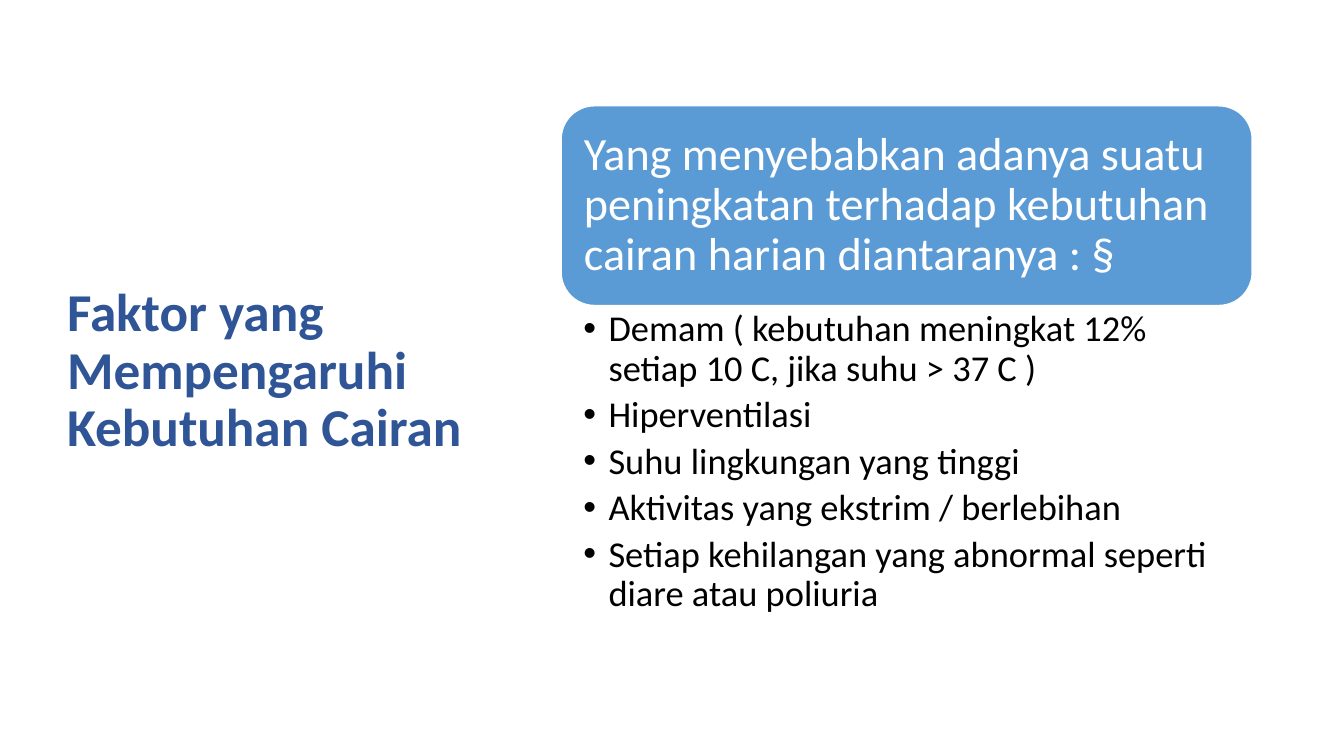
from dataclasses import dataclass

from lxml.etree import SubElement
from pptx import Presentation
from pptx.dml.color import RGBColor
from pptx.enum.shapes import MSO_SHAPE
from pptx.enum.text import MSO_ANCHOR, PP_ALIGN
from pptx.oxml.ns import qn
from pptx.util import Inches, Pt

PAGE_WIDTH, PAGE_HEIGHT = Inches(13.33), Inches(7.5)
COLUMN, ROW = PAGE_WIDTH / 12, PAGE_HEIGHT / 12
FONT = "Calibri"
COLOURS = {
    "title": "2F5597",
    "panel": "5B9BD5",
    "white": "FFFFFF",
    "black": "000000",
}


@dataclass(frozen=True)
class Area:
    column: float
    row: float
    columns: float
    rows: float

    def box(self) -> tuple[int, int, int, int]:
        return (round(self.column * COLUMN), round(self.row * ROW),
                round(self.columns * COLUMN), round(self.rows * ROW))


@dataclass(frozen=True)
class TextBlock:
    area: Area
    paragraphs: tuple[str, ...]
    size: int
    colour: str
    insets: tuple[float, float, float, float] = (0.1, 0.05, 0.1, 0.05)
    anchor: MSO_ANCHOR = MSO_ANCHOR.MIDDLE
    bold: bool = False
    bullets: bool = False
    gap: float = 0
    fill: str | None = None


PANEL = Area(5.01, 1.68, 6.17, 3.17)
BLOCKS = (
    TextBlock(Area(0.51, 1.09, 3.74, 9.63),
              ("Faktor yang Mempengaruhi Kebutuhan Cairan",),
              38, "title", bold=True),
    TextBlock(PANEL,
              ("Yang menyebabkan adanya suatu peningkatan terhadap "
               "kebutuhan cairan harian diantaranya : §",),
              33, "white", insets=(0.13, 0.13, 0.13, 0.13), fill="panel"),
    TextBlock(Area(PANEL.column, PANEL.row + PANEL.rows, PANEL.columns, 5.26),
              ("Demam ( kebutuhan meningkat 12% setiap 10 C, jika suhu > 37 C )",
               "Hiperventilasi",
               "Suhu lingkungan yang tinggi",
               "Aktivitas yang ekstrim / berlebihan",
               "Setiap kehilangan yang abnormal seperti diare atau poliuria"),
              26, "black", insets=(0.22, 0.05, 0.26, 0.05),
              anchor=MSO_ANCHOR.TOP, bullets=True, gap=0.2),
)


def colour(name: str) -> RGBColor:
    return RGBColor.from_string(COLOURS[name])


def add_bullet(para) -> None:
    properties = para._p.get_or_add_pPr()
    properties.set("marL", str(Inches(0.25)))
    properties.set("indent", str(-Inches(0.25)))
    SubElement(properties, qn("a:buFont"), typeface="Arial")
    SubElement(properties, qn("a:buChar"), char="•")


def add_block(page, block: TextBlock) -> None:
    if block.fill:
        shape = page.shapes.add_shape(
            MSO_SHAPE.ROUNDED_RECTANGLE, *block.area.box())
        shape.shadow.inherit = False
        shape.fill.solid()
        shape.fill.fore_color.rgb = colour(block.fill)
        shape.line.color.rgb = colour("white")
        shape.line.width = Pt(1)
    else:
        shape = page.shapes.add_textbox(*block.area.box())

    frame = shape.text_frame
    frame.word_wrap = True
    frame.vertical_anchor = block.anchor
    (frame.margin_left, frame.margin_top,
     frame.margin_right, frame.margin_bottom) = map(Inches, block.insets)
    frame.text = "\n".join(block.paragraphs)
    for para in frame.paragraphs:
        para.alignment = PP_ALIGN.LEFT
        para.line_spacing = 0.9
        para.space_after = Pt(block.gap * block.size)
        para.font.name = FONT
        para.font.size = Pt(block.size)
        para.font.bold = block.bold
        para.font.color.rgb = colour(block.colour)
        if block.bullets:
            add_bullet(para)


def main() -> None:
    deck = Presentation()
    deck.slide_width, deck.slide_height = PAGE_WIDTH, PAGE_HEIGHT
    page = deck.slides.add_slide(deck.slide_layouts[6])
    for block in BLOCKS:
        add_block(page, block)
    deck.save("out.pptx")


if __name__ == "__main__":
    main()
